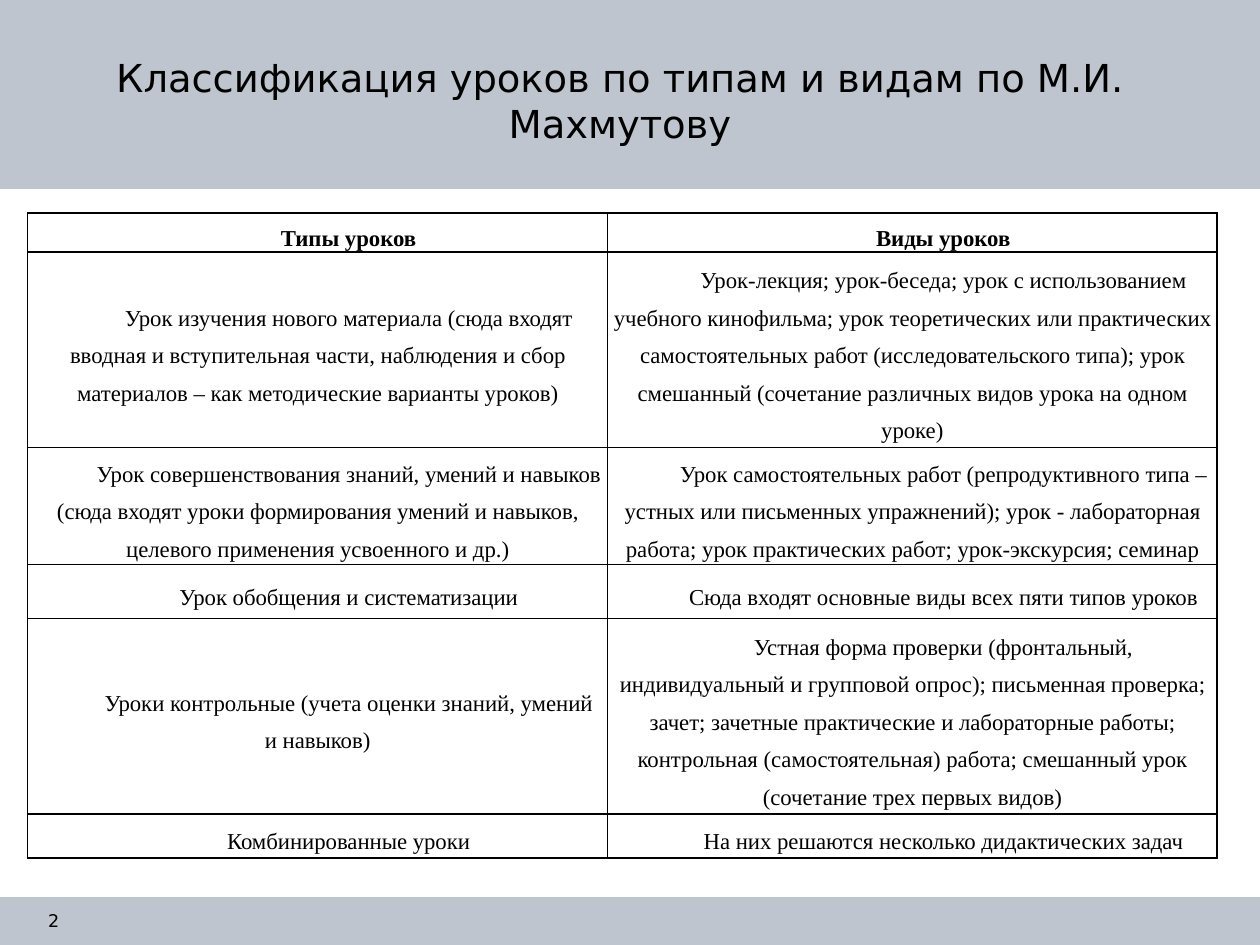
from pptx import Presentation
from pptx.dml.color import RGBColor
from pptx.enum.shapes import MSO_SHAPE as Shape
from pptx.enum.text import MSO_ANCHOR as Anchor, MSO_AUTO_SIZE as AutoSize, PP_ALIGN as Align
from pptx.oxml.ns import qn
from pptx.util import Inches, Pt
from lxml.etree import SubElement

BLACK = RGBColor(0x00, 0x00, 0x00)
BAND = RGBColor(0xBF, 0xC5, 0xCE)

COLUMN_WIDTHS = [4.6, 4.84]
ROW_HEIGHTS = [0.31, 1.55, 0.93, 0.43, 1.55, 0.35]
LESSONS = [
    ("Типы уроков", "Виды уроков"),
    ("Урок изучения нового материала (сюда входят вводная и вступительная части, "
     "наблюдения и сбор материалов – как методические варианты уроков)",
     "Урок-лекция; урок-беседа; урок с использованием учебного кинофильма; "
     "урок теоретических или практических самостоятельных работ "
     "(исследовательского типа); урок смешанный (сочетание различных видов "
     "урока на одном уроке)"),
    ("Урок совершенствования знаний, умений и навыков (сюда входят уроки "
     "формирования умений и навыков, целевого применения усвоенного и др.)",
     "Урок самостоятельных работ (репродуктивного типа – устных или письменных "
     "упражнений); урок - лабораторная работа; урок практических работ; "
     "урок-экскурсия; семинар"),
    ("Урок обобщения и систематизации",
     "Сюда входят основные виды всех пяти типов уроков"),
    ("Уроки контрольные (учета оценки знаний, умений и навыков)",
     "Устная форма проверки (фронтальный, индивидуальный и групповой опрос); "
     "письменная проверка; зачет; зачетные практические и лабораторные работы; "
     "контрольная (самостоятельная) работа; смешанный урок (сочетание трех "
     "первых видов)"),
    ("Комбинированные уроки", "На них решаются несколько дидактических задач"),
]


class SlideBuilder:
    heading_font = "DejaVu Sans"
    table_font = "Times New Roman"

    def __init__(self, slide):
        self.slide = slide

    def format(self, paragraph, font, size, align, bold=False):
        paragraph.alignment = align
        paragraph.font.name = font
        paragraph.font.size = Pt(size)
        paragraph.font.bold = bold
        paragraph.font.color.rgb = BLACK

    def band(self, top, height):
        band = self.slide.shapes.add_shape(
            Shape.RECTANGLE, 0, Inches(top), Inches(10), Inches(height))
        band.shadow.inherit = False
        band.fill.solid()
        band.fill.fore_color.rgb = BAND
        band.line.fill.background()

    def title(self, text, left, top, width, height):
        title = self.slide.shapes.title
        title.left, title.top = Inches(left), Inches(top)
        title.width, title.height = Inches(width), Inches(height)
        frame = title.text_frame
        frame.text = text
        frame.vertical_anchor = Anchor.TOP
        frame.auto_size = AutoSize.NONE
        self.format(frame.paragraphs[0], self.heading_font, 22, Align.CENTER)
        # Bring the title in front of the header band
        title._element.getparent().append(title._element)

    def page_number(self, text, left, top, width, height):
        box = self.slide.shapes.add_textbox(
            Inches(left), Inches(top), Inches(width), Inches(height))
        frame = box.text_frame
        frame.margin_left = frame.margin_right = 0
        frame.margin_top = frame.margin_bottom = 0
        frame.word_wrap = True
        frame.vertical_anchor = Anchor.MIDDLE
        frame.text = text
        self.format(frame.paragraphs[0], self.heading_font, 10, Align.RIGHT)

    def borders(self, cell):
        properties = cell._tc.get_or_add_tcPr()
        for side in ("lnL", "lnR", "lnT", "lnB"):
            line = SubElement(properties, qn(f"a:{side}"), w=str(Pt(1)))
            fill = SubElement(line, qn("a:solidFill"))
            SubElement(fill, qn("a:srgbClr"), val=str(BLACK))

    def cell(self, cell, text, bold):
        cell.text = text
        cell.vertical_anchor = Anchor.MIDDLE
        cell.margin_left = cell.margin_right = Inches(0.05)
        cell.margin_top = cell.margin_bottom = 0
        self.borders(cell)
        cell.fill.background()
        paragraph = cell.text_frame.paragraphs[0]
        paragraph.line_spacing = 1.5
        # First-line indent
        indent = paragraph._p.get_or_add_pPr()
        indent.set("marL", "0")
        indent.set("indent", str(Inches(0.49)))
        self.format(paragraph, self.table_font, 13, Align.CENTER, bold)

    def table(self, rows, left, top, widths, heights):
        table = self.slide.shapes.add_table(
            len(rows), len(widths), Inches(left), Inches(top),
            Inches(sum(widths)), Inches(sum(heights))).table
        table.first_row = table.horz_banding = False
        for column, width in zip(table.columns, widths):
            column.width = Inches(width)
        for row, height in zip(table.rows, heights):
            row.height = Inches(height)
        for r, texts in enumerate(rows):
            for c, text in enumerate(texts):
                self.cell(table.cell(r, c), text, bold=r == 0)


def main():
    deck = Presentation()
    deck.slide_width, deck.slide_height = Inches(10), Inches(7.5)
    builder = SlideBuilder(deck.slides.add_slide(deck.slide_layouts[5]))

    # Header and footer bands
    builder.band(0, 1.5)
    builder.band(7.12, 0.38)
    builder.page_number("2", 0.22, 7.22, 0.25, 0.17)

    # Title and classification table
    builder.title("Классификация уроков по типам и видам по М.И. Махмутову",
                  0.25, 0.38, 9.34, 1.12)
    builder.table(LESSONS, 0.22, 1.69, COLUMN_WIDTHS, ROW_HEIGHTS)

    deck.save("out.pptx")


if __name__ == "__main__":
    main()
